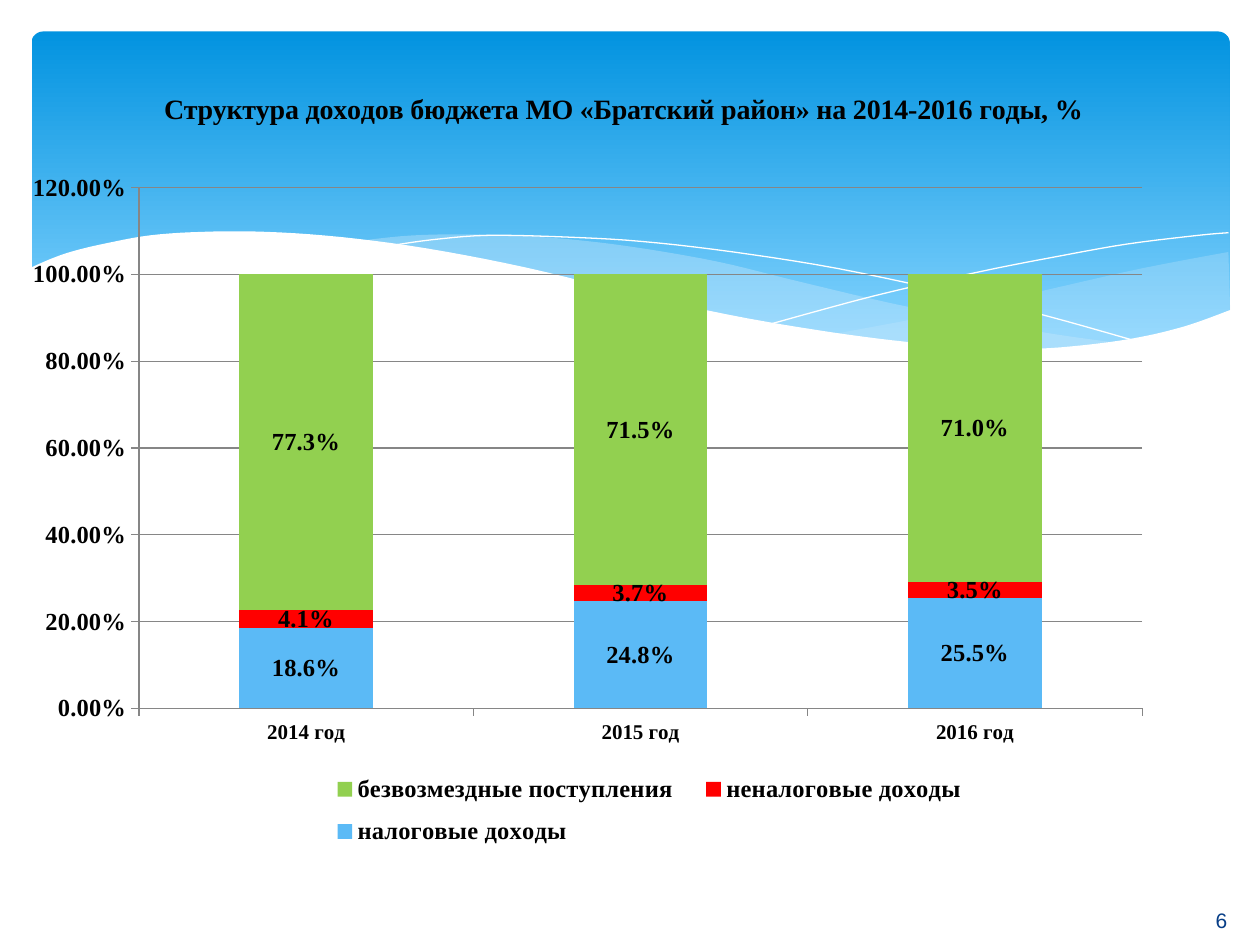
import dataclasses

import pptx
import pptx.chart.data
import pptx.dml.color
import pptx.enum.chart
import pptx.enum.shapes
import pptx.enum.text
import pptx.oxml
import pptx.oxml.ns
import pptx.util
from lxml import etree

Pt = pptx.util.Pt
qn = pptx.oxml.ns.qn
Points = list[tuple[float, float]]

FONT = "Times New Roman"
COLORS = {
    "top": "0293E0", "low": "83D3FE", "haze": "C6E7FC", "white": "FFFFFF",
    "black": "000000", "page": "073E87", "axis": "868686",
    "tax": "5BBAF6", "other": "FF0000", "grant": "92D050",
}


@dataclasses.dataclass
class Wave:
    edges: list[Points]      # each edge is drawn as a smooth curve
    color: str
    alpha: int = 100
    closed: bool = True


@dataclasses.dataclass
class Income:
    name: str
    values: list[float]
    color: str


WAVES = [
    Wave([[(702, 144), (652, 153.5), (599, 165.5), (542, 178.5), (476, 191)],
          [(476, 191), (517, 196), (554, 199), (586, 200), (622, 199),
           (657, 194.5), (683, 187.5), (703, 178)]], "haze", 29),
    Wave([[(206, 137.5), (236, 134.5), (274, 134), (317, 136), (361, 141),
           (410, 149.5), (453, 160), (508, 173), (558, 183), (603, 191),
           (643, 196.5)],
          [(643, 196.5), (617, 199.5), (581, 201), (548, 199.5), (510.5, 196),
           (468, 190), (420, 181.5), (353.5, 167), (307, 155.5), (261, 146),
           (206, 137.5)]], "haze", 40),
    Wave([[(222.5, 140.5), (247, 137), (279, 134.5), (324, 135.5), (367, 138),
           (419, 144), (479, 153.5), (547, 168), (598, 180.5), (653, 196)]],
         "white", closed=False),
    Wave([[(441, 185), (500, 169), (559, 155.5), (602, 147), (644, 139.5),
           (685, 134.5), (702, 133)]], "white", closed=False),
    Wave([[(703.5, 177), (677, 186.5), (647, 193.5), (612, 198), (582, 199.5),
           (548, 198), (510, 194.5), (466, 188.5), (417, 180), (362, 168),
           (301, 153), (244, 142), (195, 135.5), (152, 132.5), (116, 132.5),
           (86, 134.5), (61, 139), (42, 143.5), (29, 148), (16.5, 153.5)],
          [(16.5, 237), (703.5, 237)]], "white"),
]

YEARS = ["2014 год", "2015 год", "2016 год"]
INCOMES = [
    Income("налоговые доходы", [0.186, 0.248, 0.255], "tax"),
    Income("неналоговые доходы", [0.041, 0.037, 0.035], "other"),
    Income("безвозмездные поступления", [0.773, 0.715, 0.71], "grant"),
]


def rgb(name: str) -> pptx.dml.color.RGBColor:
    return pptx.dml.color.RGBColor.from_string(COLORS[name])


def smooth(knots: Points, steps: int = 5) -> Points:
    """Catmull-Rom curve through the knots."""
    if len(knots) < 3:
        return knots
    ring = [knots[0], *knots, knots[-1]]
    curve = [knots[0]]
    for a, b, c, d in zip(ring, ring[1:], ring[2:], ring[3:]):
        for step in range(1, steps + 1):
            t = step / steps
            curve.append(tuple(
                (2 * q + (r - p) * t + (2 * p - 5 * q + 4 * r - s) * t ** 2
                 + (3 * q - p - 3 * r + s) * t ** 3) / 2
                for p, q, r, s in zip(a, b, c, d)))
    return curve


def draw_wave(slide, wave: Wave) -> None:
    dots = [(Pt(x), Pt(y)) for edge in wave.edges for x, y in smooth(edge)]
    pen = slide.shapes.build_freeform(*dots[0])
    pen.add_line_segments(dots[1:], close=wave.closed)
    shape = pen.convert_to_shape()
    shape.shadow.inherit = False
    if not wave.closed:
        shape.fill.background()
        shape.line.color.rgb = rgb(wave.color)
        shape.line.width = Pt(0)
        return
    shape.line.fill.background()
    shape.fill.solid()
    shape.fill.fore_color.rgb = rgb(wave.color)
    if wave.alpha < 100:
        tint = shape.fill._xPr.find(".//" + qn("a:srgbClr"))
        etree.SubElement(tint, qn("a:alpha"), val=str(wave.alpha * 1000))


def draw_sky(slide) -> None:
    sky = slide.shapes.add_shape(pptx.enum.shapes.MSO_SHAPE.ROUNDED_RECTANGLE,
                                 Pt(18), Pt(18), Pt(684.7), Pt(194.4))
    sky.adjustments[0] = 0.034
    sky.shadow.inherit = False
    sky.line.fill.background()
    sky.fill.gradient()
    sky.fill.gradient_angle = 270
    for stop, place, name in zip(sky.fill.gradient_stops, (0, 0.9), ("top", "low")):
        stop.position = place
        stop.color.rgb = rgb(name)


def style(font, size: float) -> None:
    font.name, font.size, font.bold = FONT, Pt(size), True
    font.color.rgb = rgb("black")


def place(part, index: int, inner: bool = False, **box: float) -> None:
    """Give a chart part a fixed place, in fractions of the chart."""
    for old in part.findall(qn("c:layout")):
        part.remove(old)
    layout = etree.Element(qn("c:layout"))
    manual = etree.SubElement(layout, qn("c:manualLayout"))
    if inner:
        etree.SubElement(manual, qn("c:layoutTarget"), val="inner")
    for key in ("x", "y"):
        etree.SubElement(manual, qn(f"c:{key}Mode"), val="edge")
    for key, value in box.items():
        etree.SubElement(manual, qn(f"c:{key}"), val=str(value))
    part.insert(index, layout)


def clear() -> etree._Element:
    props = etree.Element(qn("c:spPr"))
    etree.SubElement(props, qn("a:noFill"))
    etree.SubElement(etree.SubElement(props, qn("a:ln")), qn("a:noFill"))
    return props


def draw_chart(slide) -> None:
    kinds = pptx.enum.chart
    data = pptx.chart.data.CategoryChartData(number_format="0.0%")
    data.categories = YEARS
    for item in INCOMES:
        data.add_series(item.name, item.values)
    chart = slide.shapes.add_chart(kinds.XL_CHART_TYPE.COLUMN_STACKED, Pt(16.56),
                                   Pt(35.28), Pt(675.36), Pt(470.16), data).chart
    chart.font.name, chart.font.size = "Cabin", Pt(10)

    # Title and legend
    chart.has_title = True
    text = chart.chart_title.text_frame
    text.text = "Структура доходов бюджета МО «Братский район» на 2014-2016 годы, %"
    style(text.paragraphs[0].font, 16)
    place(chart.chart_title._element, 1, x=0.11, y=0.03)
    chart.has_legend = True
    chart.legend.position = kinds.XL_LEGEND_POSITION.RIGHT
    chart.legend.include_in_layout = False
    style(chart.legend.font, 14)
    place(chart.legend._element, 1, x=0.24, y=0.85, w=0.57, h=0.12)

    # Axes
    for axis, size in ((chart.category_axis, 12), (chart.value_axis, 14)):
        style(axis.tick_labels.font, size)
        axis.format.line.color.rgb = rgb("axis")
        axis.major_tick_mark = kinds.XL_TICK_MARK.OUTSIDE
    scale = chart.value_axis
    scale.minimum_scale, scale.maximum_scale, scale.major_unit = 0, 1.2, 0.2
    scale.tick_labels.number_format = "0.00%"
    scale.tick_labels.number_format_is_linked = False
    scale.major_gridlines.format.line.color.rgb = rgb("axis")

    # Columns
    plot = chart.plots[0]
    plot.gap_width, plot.overlap = 150, 100
    plot.vary_by_categories = False
    for series, item in zip(plot.series, INCOMES):
        series.format.fill.solid()
        series.format.fill.fore_color.rgb = rgb(item.color)
        labels = series.data_labels
        labels.show_value = True
        labels.number_format, labels.number_format_is_linked = "0.0%", False
        labels.position = kinds.XL_LABEL_POSITION.CENTER
        style(labels.font, 14)

    # Plot place and clear backgrounds
    body = chart._chartSpace.find(qn("c:chart"))
    area = body.find(qn("c:plotArea"))
    place(area, 0, inner=True, x=0.093, y=0.153, w=0.849, h=0.633)
    area.append(clear())
    body.addnext(clear())


def draw_page(slide, number: str) -> None:
    frame = slide.shapes.add_textbox(Pt(652.3), Pt(511.2), Pt(91.4), Pt(28.8)).text_frame
    frame.word_wrap = True
    frame.vertical_anchor = pptx.enum.text.MSO_ANCHOR.MIDDLE
    line = frame.paragraphs[0]
    line.text = number
    line.alignment = pptx.enum.text.PP_ALIGN.CENTER
    line.font.name, line.font.size = "Arial", Pt(12)
    line.font.color.rgb = rgb("page")


def main() -> None:
    deck = pptx.Presentation()
    deck.slide_width, deck.slide_height = Pt(720), Pt(540)
    slide = deck.slides.add_slide(deck.slide_layouts[6])
    draw_sky(slide)
    for wave in WAVES:
        draw_wave(slide, wave)
    draw_page(slide, "6")
    draw_chart(slide)
    deck.save("out.pptx")


if __name__ == "__main__":
    main()
